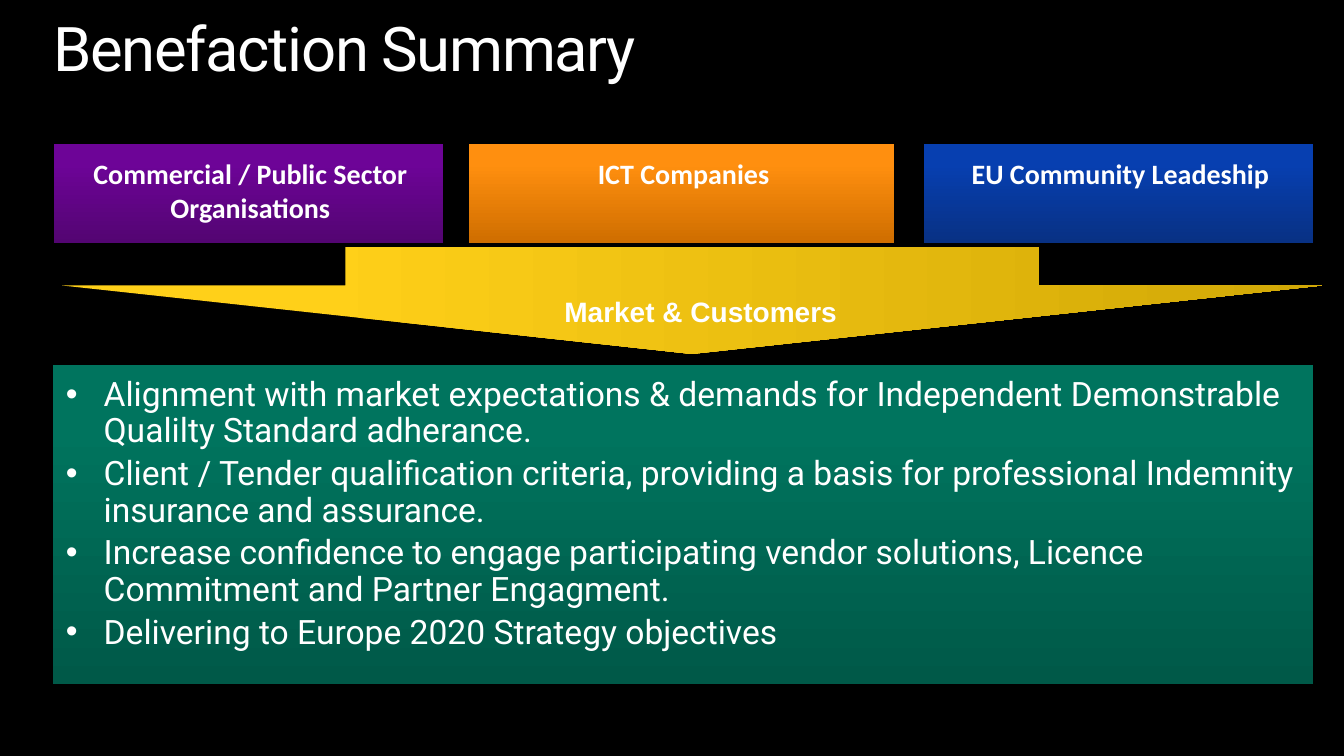
from dataclasses import dataclass

from lxml import etree
from pptx import Presentation
from pptx import util as u
from pptx.dml.color import RGBColor
from pptx.enum import shapes, text
from pptx.oxml import ns

COLORS = {
    "background": "000000",
    "text": "FFFFFF",
    "purple": "6D0497",
    "purple_dark": "530572",
    "orange": "FF8F0F",
    "orange_dark": "CF6E00",
    "blue": "073FB0",
    "blue_dark": "083184",
    "yellow": "FFD019",
    "yellow_dark": "D1A806",
    "green": "00745E",
    "green_dark": "005948",
}
PANEL_INSETS = (9, 9, 6, 6)
BULLET_INDENT = 27


@dataclass(frozen=True)
class Card:
    label: str
    left: float
    width: float
    color: str


CARDS = [
    Card("Commercial / Public Sector Organisations", 38.3, 278, "purple"),
    Card("ICT Companies", 335, 303.6, "orange"),
    Card("EU Community Leadeship", 659.8, 278, "blue"),
]
BENEFITS = [
    "Alignment with market expectations & demands for Independent Demonstrable Qualilty Standard adherance.",
    "Client / Tender qualification criteria, providing a basis for professional Indemnity insurance and assurance.",
    "Increase confidence to engage participating vendor solutions, Licence Commitment and Partner Engagment.",
    "Delivering to Europe 2020 Strategy objectives",
]


def rgb(name: str) -> RGBColor:
    return RGBColor.from_string(COLORS[name])


def place(shape, left: float, top: float, width: float, height: float) -> None:
    shape.left, shape.top = u.Pt(left), u.Pt(top)
    shape.width, shape.height = u.Pt(width), u.Pt(height)


def fill_gradient(shape, color: str, angle: int = 270) -> None:
    shape.fill.gradient()
    shape.fill.gradient_angle = angle
    stops = zip(shape.fill.gradient_stops, (0.2, 1), (color, f"{color}_dark"))
    for stop, position, name in stops:
        stop.position = position
        stop.color.rgb = rgb(name)
    shape.line.fill.background()


def add_bullet(paragraph) -> None:
    properties = paragraph._p.get_or_add_pPr()
    properties.set("marL", str(u.Pt(BULLET_INDENT)))
    properties.set("indent", str(-u.Pt(BULLET_INDENT)))
    etree.SubElement(properties, ns.qn("a:buFont"), typeface="Arial")
    etree.SubElement(properties, ns.qn("a:buChar"), char="•")


def write_text(shape, *lines: str, font: str, size: float, bold: bool = False,
               align=text.PP_ALIGN.LEFT, insets=(7.2, 3.6, 7.2, 3.6),
               line_spacing: float = 1.0, gap: float = 0,
               tracking: float = 0, bulleted: bool = False) -> None:
    frame = shape.text_frame
    frame.word_wrap = True
    frame.auto_size = text.MSO_AUTO_SIZE.NONE
    frame.vertical_anchor = text.MSO_ANCHOR.TOP
    frame.margin_left, frame.margin_top, frame.margin_right, frame.margin_bottom = map(u.Pt, insets)
    for index, line in enumerate(lines):
        paragraph = frame.add_paragraph() if index else frame.paragraphs[0]
        if bulleted:
            add_bullet(paragraph)
        paragraph.alignment = align
        paragraph.line_spacing = line_spacing
        paragraph.space_before = u.Pt(gap if index else 0)
        run = paragraph.add_run()
        run.text = line
        run.font.name = font
        run.font.size = u.Pt(size)
        run.font.bold = bold
        run.font.color.rgb = rgb("text")
        if tracking:
            run._r.get_or_add_rPr().set("spc", str(round(tracking * 100)))


def add_card(slide, card: Card) -> None:
    shape = slide.shapes.add_shape(
        shapes.MSO_SHAPE.RECTANGLE, u.Pt(card.left), u.Pt(103), u.Pt(card.width), u.Pt(70.6))
    shape.shadow.inherit = False
    fill_gradient(shape, card.color)
    write_text(shape, card.label, font="Calibri", size=20, bold=True,
               align=text.PP_ALIGN.CENTER, insets=PANEL_INSETS)


def add_market_arrow(slide) -> None:
    arrow = slide.shapes.add_shape(
        shapes.MSO_SHAPE.DOWN_ARROW, u.Pt(44.2), u.Pt(176.4), u.Pt(900), u.Pt(76.4))
    arrow.shadow.inherit = False
    arrow.adjustments[0] = 0.55
    arrow.adjustments[1] = 0.64
    fill_gradient(arrow, "yellow", angle=0)
    label = slide.shapes.add_textbox(u.Pt(396), u.Pt(195), u.Pt(229.7), u.Pt(38))
    write_text(label, "Market & Customers", font="Arial", size=20, bold=True, line_spacing=1.5)


def main() -> None:
    presentation = Presentation()
    presentation.slide_width, presentation.slide_height = u.Pt(960), u.Pt(540)
    slide = presentation.slides.add_slide(presentation.slide_layouts[1])
    slide.background.fill.solid()
    slide.background.fill.fore_color.rgb = rgb("background")

    title = slide.shapes.title
    place(title, 38.3, 13, 517.7, 48)
    write_text(title, "Benefaction Summary", font="Roboto", size=44,
               insets=(0, 0, 0, 0), line_spacing=0.9, tracking=-1)

    benefits = slide.placeholders[1]
    place(benefits, 38, 260.6, 900, 228)
    fill_gradient(benefits, "green")
    write_text(benefits, *BENEFITS, font="Roboto", size=24, insets=PANEL_INSETS,
               line_spacing=0.9, gap=4.8, bulleted=True)

    add_market_arrow(slide)
    for card in CARDS:
        add_card(slide, card)
    presentation.save("out.pptx")


if __name__ == "__main__":
    main()
